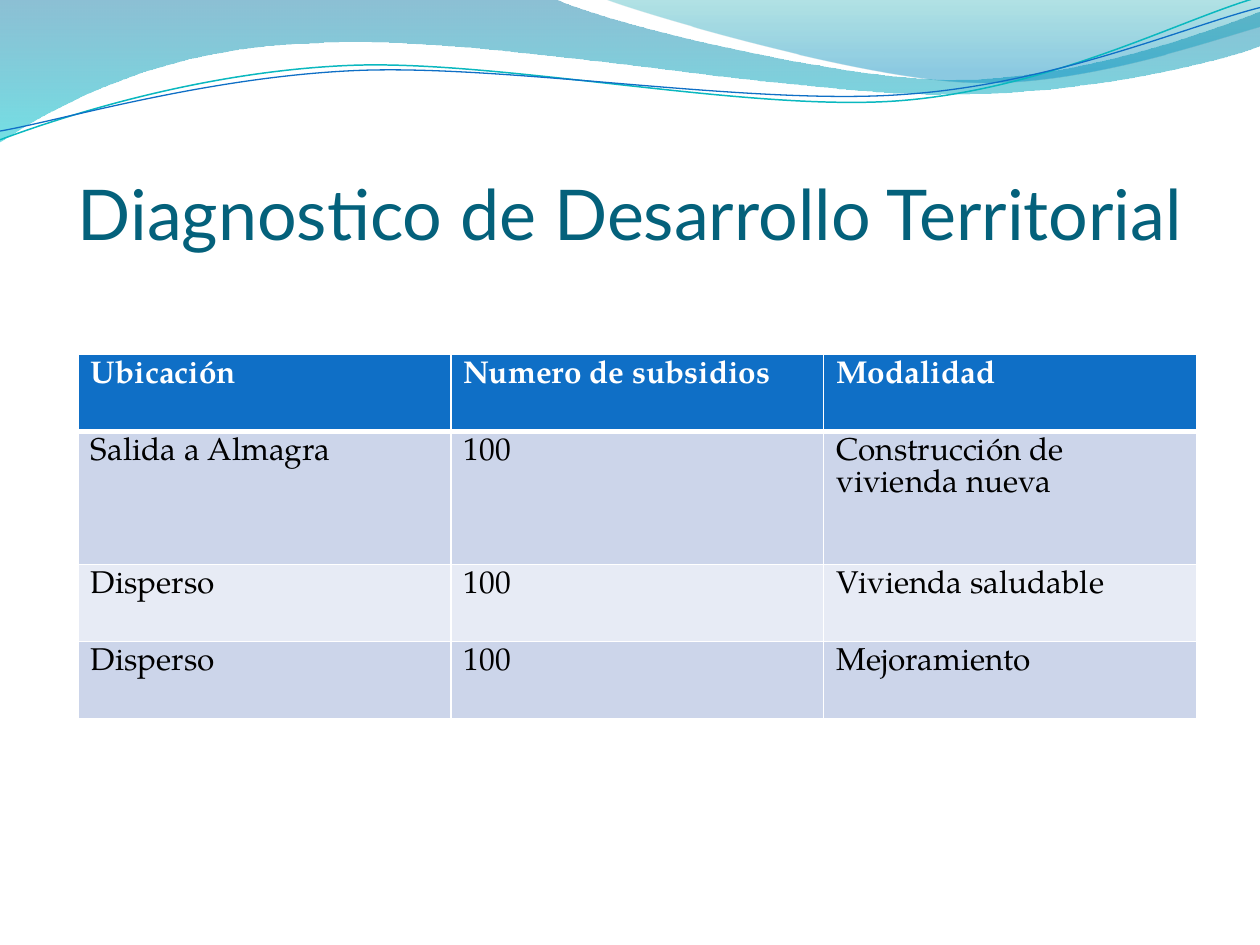
import dataclasses
import math

import lxml.etree
import pptx
import pptx.dml.color
import pptx.enum.text
import pptx.oxml.ns
import pptx.util

Pt = pptx.util.Pt
qn = pptx.oxml.ns.qn


@dataclasses.dataclass(frozen=True)
class Theme:
    title_font: str = "Lato"
    body_font: str = "TeX Gyre Pagella"
    title_size: int = 40
    table_size: int = 18
    title: str = "04617B"
    header: str = "0F6FC6"
    header_text: str = "FFFFFF"
    body_text: str = "000000"
    bands: tuple = ("CCD5EA", "E7EBF5")
    border: str = "FFFFFF"
    # Gradient stops: position, colour, opacity in percent
    wide_wave: tuple = ((0, "0074A1", 45), (100, "00C6CF", 55))
    right_wave: tuple = ((0, "00A1A9", 30), (80, "008BBF", 45))
    teal_line: str = "0AB8BF"
    blue_line: str = "0F6FC6"


THEME = Theme()
SLIDE_WIDTH, SLIDE_HEIGHT = 720, 540
LINE_ROTATION = -2.7

# Outlines in points: a pair is a straight step, a triple of pairs a Bézier curve
WIDE_WAVE = [
    (0, 0), (316.8, -0.7),
    ((342.7, 12.2), (478.1, 45.4), (545.8, 45.4)),
    ((614.2, 45.4), (689.8, 18.7), (720, 6.5)),
    (720.7, 25.9),
    ((707.8, 31.7), (626.4, 54.7), (537.1, 54)),
    ((447.8, 54), (275, 20.2), (185, 24.5)),
    ((92.9, 25.9), (33.1, 59.8), (-0.7, 81.4)),
    (0, 0),
]
RIGHT_WAVE = [
    (344.9, -0.7),
    ((366.5, 7.9), (491, 44.6), (553.7, 46.8)),
    ((616.3, 49.7), (691.9, 23), (720, 15.1)),
    (720, 0),
    (344.9, -0.7),
]
TEAL_LINE = [
    (0, 79.9),
    ((34.6, 67), (113.8, 41), (199.4, 37.4)),
    ((284.4, 33.8), (427, 64.1), (513.4, 57.6)),
    ((599.8, 51.1), (675.4, 10.8), (718.6, -1.4)),
]
BLUE_LINE = [
    (0, 74.9),
    ((33.8, 69.1), (118.1, 43.9), (203.8, 40.3)),
    ((290.2, 36.7), (429.8, 60.5), (516.2, 54)),
    ((601.9, 48.2), (677.5, 15.1), (720, 4.3)),
]

ROWS = [
    ("Ubicación", "Numero de subsidios", "Modalidad"),
    ("Salida a Almagra", "100", "Construcción de vivienda nueva"),
    ("Disperso", "100", "Vivienda saludable"),
    ("Disperso", "100", "Mejoramiento"),
]
ROW_HEIGHTS = (44, 76, 44, 44)


def rgb(value):
    return pptx.dml.color.RGBColor.from_string(value)


def add_outline(slide, box, outline, close, rotation=0):
    """Draw straight and curved steps, given as they look once the box is rotated."""
    left, top, width, height = box
    cosine, sine = math.cos(math.radians(rotation)), math.sin(math.radians(rotation))

    def local(point):
        x, y = point[0] - left - width / 2, point[1] - top - height / 2
        return (Pt(x * cosine + y * sine + width / 2),
                Pt(y * cosine - x * sine + height / 2))

    steps = [[local(point) for point in (step if len(step) == 3 else [step])]
             for step in outline]
    builder = slide.shapes.build_freeform(*steps[0][-1])
    builder.add_line_segments([step[-1] for step in steps[1:]], close=close)
    shape = builder.convert_to_shape()
    shape.left, shape.top, shape.width, shape.height = map(Pt, box)
    shape.rotation = rotation
    shape.shadow.inherit = False

    geometry = next(shape._element.iter(qn("a:path")))
    geometry.set("w", str(Pt(width)))
    geometry.set("h", str(Pt(height)))
    for element, points in zip(list(geometry), steps):
        tag = qn("a:cubicBezTo") if len(points) == 3 else element.tag
        replacement = lxml.etree.Element(tag)
        for x, y in points:
            lxml.etree.SubElement(replacement, qn("a:pt"), x=str(x), y=str(y))
        geometry.replace(element, replacement)
    return shape


def add_wave(slide, box, outline, stops):
    shape = add_outline(slide, box, outline, close=True)
    shape.line.fill.background()
    shape.fill.gradient()
    shape.fill.gradient_angle = 270
    for stop, (position, color, _) in zip(shape.fill.gradient_stops, stops):
        stop.position = position / 100
        stop.color.rgb = rgb(color)
    colors = shape._element.spPr.iter(qn("a:srgbClr"))
    for element, (_, _, opacity) in zip(colors, stops):
        lxml.etree.SubElement(element, qn("a:alpha"), val=str(opacity * 1000))


def add_wave_line(slide, box, outline, color, width):
    shape = add_outline(slide, box, outline, close=False, rotation=LINE_ROTATION)
    shape.fill.background()
    shape.line.color.rgb = rgb(color)
    shape.line.width = Pt(width)


def add_header_waves(slide):
    add_wave(slide, (-0.7, -0.7, 721.4, 82.1), WIDE_WAVE, THEME.wide_wave)
    add_wave(slide, (344.9, -0.7, 375.1, 50.4), RIGHT_WAVE, THEME.right_wave)
    add_wave_line(slide, (-1.4, 15.8, 721.4, 51.1), TEAL_LINE, THEME.teal_line, 0.85)
    add_wave_line(slide, (-1.4, 21.6, 722.2, 41.8), BLUE_LINE, THEME.blue_line, 0.75)


def add_run(paragraph, text, font_name, size, color, bold=False):
    run = paragraph.add_run()
    run.text = text
    run.font.name = font_name
    run.font.size = Pt(size)
    run.font.bold = bold
    run.font.color.rgb = rgb(color)


def place_title(slide, text, left, top, width, height):
    title = slide.shapes.title
    title.left, title.top, title.width, title.height = map(Pt, (left, top, width, height))
    frame = title.text_frame
    frame.word_wrap = True
    frame.auto_size = pptx.enum.text.MSO_AUTO_SIZE.NONE
    frame.vertical_anchor = pptx.enum.text.MSO_ANCHOR.BOTTOM
    frame.margin_left = frame.margin_right = frame.margin_bottom = 0
    frame.margin_top = Pt(3.6)
    paragraph = frame.paragraphs[0]
    paragraph.alignment = pptx.enum.text.PP_ALIGN.CENTER
    add_run(paragraph, text, THEME.title_font, THEME.title_size, THEME.title)


def set_borders(cell, widths):
    properties = cell._tc.get_or_add_tcPr()
    for index, (side, width) in enumerate(widths.items()):
        line = lxml.etree.Element(qn(f"a:ln{side}"), w=str(Pt(width)))
        fill = lxml.etree.SubElement(line, qn("a:solidFill"))
        lxml.etree.SubElement(fill, qn("a:srgbClr"), val=THEME.border)
        properties.insert(index, line)


def add_subsidy_table(slide, left, top, width):
    table = slide.shapes.add_table(
        len(ROWS), len(ROWS[0]), Pt(left), Pt(top), Pt(width), Pt(sum(ROW_HEIGHTS))).table
    for row, height in zip(table.rows, ROW_HEIGHTS):
        row.height = Pt(height)
    for row_index, texts in enumerate(ROWS):
        header = row_index == 0
        fill = THEME.header if header else THEME.bands[(row_index - 1) % 2]
        color = THEME.header_text if header else THEME.body_text
        for column_index, text in enumerate(texts):
            cell = table.cell(row_index, column_index)
            cell.fill.solid()
            cell.fill.fore_color.rgb = rgb(fill)
            set_borders(cell, {"L": 1, "R": 1, "T": 3 if row_index == 1 else 1,
                               "B": 3 if header else 1})
            add_run(cell.text_frame.paragraphs[0], text,
                    THEME.body_font, THEME.table_size, color, bold=header)


def main():
    presentation = pptx.Presentation()
    presentation.slide_width = Pt(SLIDE_WIDTH)
    presentation.slide_height = Pt(SLIDE_HEIGHT)
    slide = presentation.slides.add_slide(presentation.slide_layouts[5])
    add_header_waves(slide)
    place_title(slide, "Diagnostico de Desarrollo Territorial", 36, 55.5, 648, 90)
    add_subsidy_table(slide, 44.7, 202.5, 639)
    presentation.save("out.pptx")


if __name__ == "__main__":
    main()
